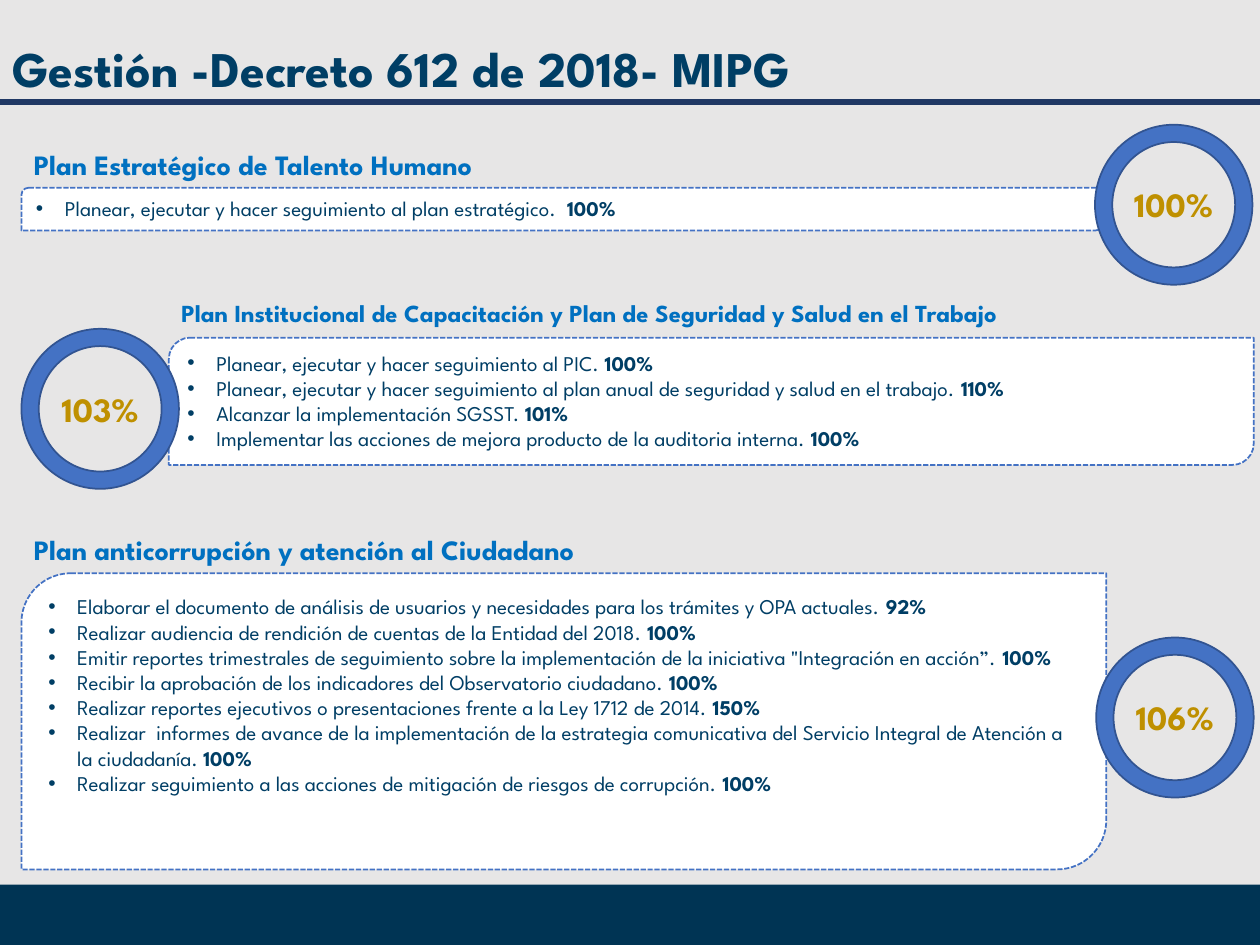
import pptx
import pptx.dml.color
import pptx.enum.dml
import pptx.enum.shapes
import pptx.enum.text
import pptx.util
from lxml import etree

hue = pptx.dml.color.RGBColor.from_string
kinds = pptx.enum.shapes.MSO_SHAPE
dash = pptx.enum.dml.MSO_LINE.SQUARE_DOT
left = pptx.enum.text.PP_ALIGN.LEFT
mid = pptx.enum.text.PP_ALIGN.CENTER
top = pptx.enum.text.MSO_ANCHOR.TOP
half = pptx.enum.text.MSO_ANCHOR.MIDDLE
pt = pptx.util.Pt

deck = pptx.Presentation()
deck.slide_width = pptx.util.Inches(10)
deck.slide_height = pptx.util.Inches(7.5)
col = deck.slide_width / 100
row = deck.slide_height / 75
slide = deck.slides.add_slide(deck.slide_layouts[6])
slide.background.fill.solid()
slide.background.fill.fore_color.rgb = hue("E7E6E6")


def draw(kind, area, fill, edge=None):
    """Add a preset shape; area is left, top, width, height in grid cells."""
    x, y, w, h = area
    shape = slide.shapes.add_shape(
        kind, int(x * col), int(y * row), int(w * col), int(h * row))
    shape.shadow.inherit = False
    shape.fill.solid()
    shape.fill.fore_color.rgb = hue(fill)
    if edge:
        shape.line.color.rgb = hue(edge)
        shape.line.width = pt(1)
    else:
        shape.line.fill.background()
    return shape


def write(area, text, size, color, align=left, anchor=top):
    """Add a text box with one bold line."""
    x, y, w, h = area
    box = slide.shapes.add_textbox(
        int(x * col), int(y * row), int(w * col), int(h * row))
    frame = box.text_frame
    frame.word_wrap = True
    frame.vertical_anchor = anchor
    para = frame.paragraphs[0]
    para.alignment = align
    run = para.add_run()
    run.text = text
    look = {"name": "League Spartan", "size": pt(size), "bold": True}
    for key, value in look.items():
        setattr(run.font, key, value)
    run.font.color.rgb = hue(color)


# Footer band, title and the rule below it
draw(kinds.RECTANGLE, (0, 70.2, 100, 4.8), "003454")
rule = slide.shapes.add_connector(
    pptx.enum.shapes.MSO_CONNECTOR.STRAIGHT,
    0, int(8.1 * row), deck.slide_width, int(8.1 * row))
rule.line.color.rgb = hue("203864")
rule.line.width = pt(3)
etree.SubElement(rule.element.spPr, pptx.oxml.ns.qn("a:effectLst"))
write((0, 2.8, 84.4, 5.1), "Gestión -Decreto 612 de 2018- MIPG", 28.5, "003E65",
      anchor=half)

# Heading, its size and area; panel area; ring corner and total; goals
plans = [
    ("Plan Estratégico de Talento Humano", 16, (1.7, 11.2, 45.4, 3.7),
     (1.7, 14.9, 85.8, 3.4), (86.9, 9.9), "100%", [
         ("Planear, ejecutar y hacer seguimiento al plan estratégico.  ", "100%"),
     ]),
    ("Plan Institucional de Capacitación y Plan de Seguridad y Salud en el Trabajo",
     14, (13.4, 23.2, 74.2, 3.4),
     (13.4, 26.8, 86.1, 10.1), (1.7, 26.1), "103%", [
         ("Planear, ejecutar y hacer seguimiento al PIC. ", "100%"),
         ("Planear, ejecutar y hacer seguimiento al plan anual de seguridad y "
          "salud en el trabajo. ", "110%"),
         ("Alcanzar la implementación SGSST. ", "101%"),
         ("Implementar las acciones de mejora producto de la auditoria interna. ",
          "100%"),
     ]),
    ("Plan anticorrupción y atención al Ciudadano", 16, (1.7, 41.8, 59, 3.7),
     (1.7, 45.5, 86.1, 23.5), (87, 50.6), "106%", [
         ("Elaborar el documento de análisis de usuarios y necesidades para los "
          "trámites y OPA actuales. ", "92%"),
         ("Realizar audiencia de rendición de cuentas de la Entidad del 2018. ",
          "100%"),
         ("Emitir reportes trimestrales de seguimiento sobre la implementación de "
          "la iniciativa \"Integración en acción”. ", "100%"),
         ("Recibir la aprobación de los indicadores del Observatorio ciudadano. ",
          "100%"),
         ("Realizar reportes ejecutivos o presentaciones frente a la Ley 1712 de "
          "2014. ", "150%"),
         ("Realizar  informes de avance de la implementación de la estrategia "
          "comunicativa del Servicio Integral de Atención a la ciudadanía. ",
          "100%"),
         ("Realizar seguimiento a las acciones de mitigación de riesgos de "
          "corrupción. ", "100%"),
     ]),
]

for head, size, spot, area, (x, y), total, goals in plans:
    panel = draw(kinds.ROUND_2_DIAG_RECTANGLE, area, "FFFFFF", "4472C4")
    panel.line.dash_style = dash
    frame = panel.text_frame
    frame.word_wrap = True
    frame.vertical_anchor = top
    for i, (goal, score) in enumerate(goals):
        para = frame.add_paragraph() if i else frame.paragraphs[0]
        para.alignment = left
        props = para._p.get_or_add_pPr()
        props.set("marL", str(int(2.3 * col)))
        props.set("indent", str(int(-2.3 * col)))
        for tag, key, value in [("a:buFont", "typeface", "Arial"),
                                ("a:buChar", "char", "•")]:
            etree.SubElement(props, pptx.oxml.ns.qn(tag)).set(key, value)
        for text, bold in [(goal, False), (score, True)]:
            run = para.add_run()
            run.text = text
            look = {"name": "League Spartan", "size": pt(12), "bold": bold}
            for key, value in look.items():
                setattr(run.font, key, value)
            run.font.color.rgb = hue("003E65")
    write(spot, head, size, "0070C0")
    ring = draw(kinds.DONUT, (x, y, 12.5, 12.7), "4472C4", "325491")
    ring.adjustments[0] = 0.11
    write((x, y + 4.2, 12.5, 4.3), total, 19.5, "BF9000", mid)

deck.save("out.pptx")
